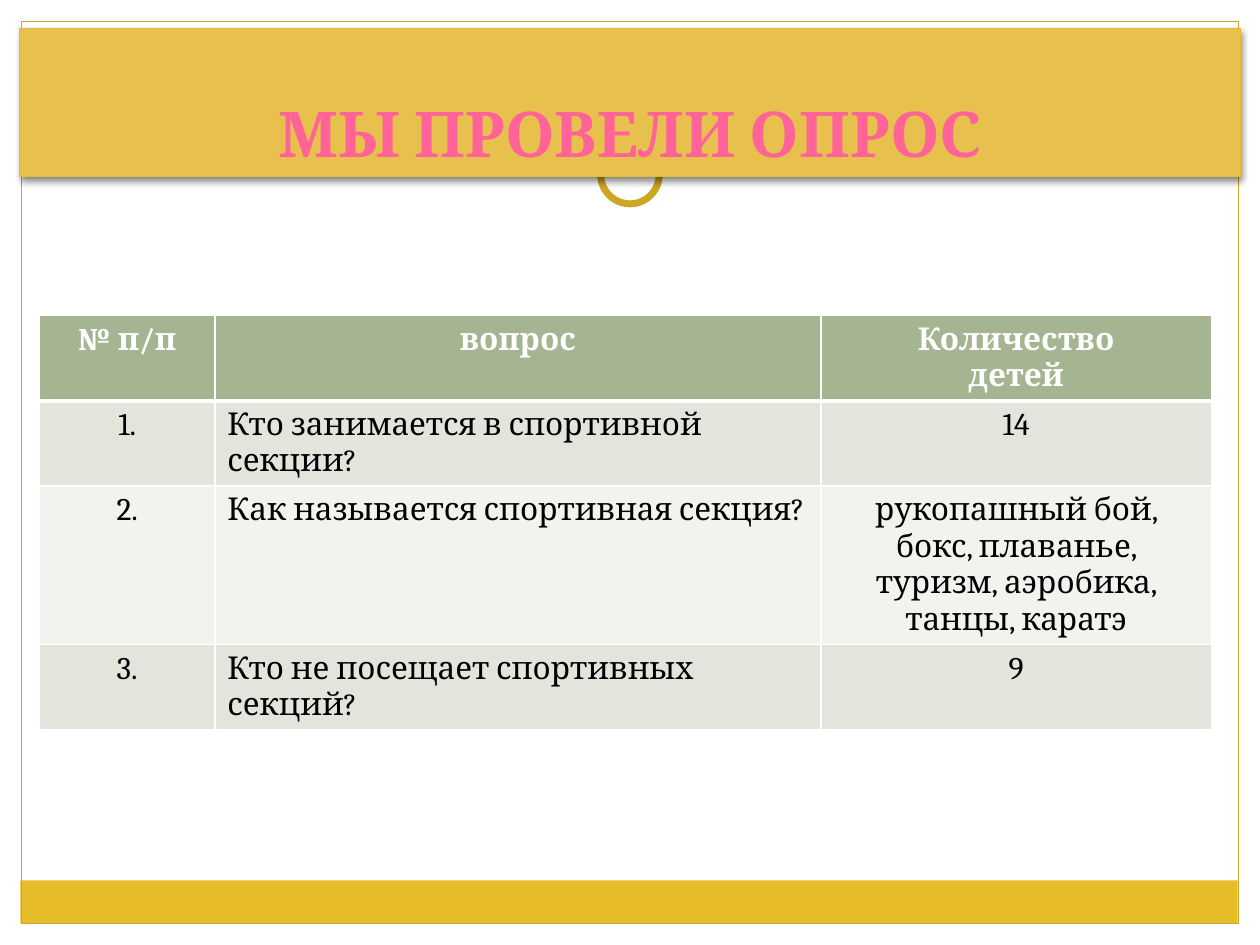
from lxml.etree import SubElement
from pptx import Presentation
from pptx.dml.color import RGBColor
from pptx.enum.dml import MSO_LINE
from pptx.enum.shapes import MSO_CONNECTOR, MSO_SHAPE
from pptx.enum.text import MSO_ANCHOR, PP_ALIGN
from pptx.oxml import parse_xml
from pptx.oxml.ns import nsdecls, qn
from pptx.util import Cm, Pt

WHITE = RGBColor(0xFF, 0xFF, 0xFF)
BLACK = RGBColor(0x00, 0x00, 0x00)
GOLD = RGBColor(0xE7, 0xBC, 0x29)
DARK_GOLD = RGBColor(0xCC, 0xA6, 0x24)
TITLE_GOLD = RGBColor(0xE8, 0xC0, 0x4D)
PINK = RGBColor(0xFF, 0x63, 0x98)
HEADER_GREEN = RGBColor(0xA5, 0xB5, 0x92)
BANDS = [RGBColor(0xE1, 0xE5, 0xDC), RGBColor(0xF0, 0xF3, 0xEE)]
FONT = "Cambria"

prs = Presentation()
prs.slide_width, prs.slide_height = Cm(25.4), Cm(19.05)
s = prs.slides.add_slide(prs.slide_layouts[6])


def add_box(kind, x, y, w, h, fill=None, line=None, width=0.75):
    sp = s.shapes.add_shape(kind, Cm(x), Cm(y), Cm(w), Cm(h))
    sp.shadow.inherit = False
    if fill is None:
        sp.fill.background()
    else:
        sp.fill.solid()
        sp.fill.fore_color.rgb = fill
    if line is None:
        sp.line.fill.background()
    else:
        sp.line.color.rgb = line
        sp.line.width = Pt(width)
    return sp


def write(p, text, size, color, bold, align):
    p.alignment = align
    r = p.add_run()
    r.text = text
    r.font.name = FONT
    r.font.size = Pt(size)
    r.font.bold = bold
    r.font.color.rgb = color


# Slide frame, footer band and ring
add_box(MSO_SHAPE.RECTANGLE, 0.41, 17.75, 24.54, 0.86, fill=GOLD)
add_box(MSO_SHAPE.RECTANGLE, 0.43, 0.43, 24.54, 18.19, line=DARK_GOLD)
rule = s.shapes.add_connector(MSO_CONNECTOR.STRAIGHT, Cm(0.43), Cm(3.56), Cm(24.97), Cm(3.56))
rule.line.color.rgb = DARK_GOLD
rule.line.width = Pt(0.75)
rule.line.dash_style = MSO_LINE.SQUARE_DOT
SubElement(rule._element.spPr, qn("a:effectLst"))
add_box(MSO_SHAPE.OVAL, 11.85, 2.67, 1.7, 1.7, fill=WHITE)
add_box(MSO_SHAPE.OVAL, 12.11, 2.93, 1.18, 1.18, fill=WHITE, line=DARK_GOLD, width=4)

# Title banner
title = add_box(MSO_SHAPE.RECTANGLE, 0.4, 0.58, 24.61, 2.98, fill=TITLE_GOLD, line=GOLD)
effects = title._element.spPr.find(qn("a:effectLst"))
effects.append(parse_xml(
    f'<a:outerShdw {nsdecls("a")} blurRad="50800" dist="25400" dir="5400000" rotWithShape="0">'
    '<a:srgbClr val="000000"><a:alpha val="45000"/></a:srgbClr></a:outerShdw>'))
tf = title.text_frame
tf.word_wrap = True
tf.vertical_anchor = MSO_ANCHOR.BOTTOM
write(tf.paragraphs[0], "МЫ ПРОВЕЛИ ОПРОС", 36, PINK, True, PP_ALIGN.CENTER)

# Survey table
rows = [
    ("№ п/п", "вопрос", "Количество\nдетей"),
    ("1.", "Кто занимается в спортивной секции?", "14"),
    ("2.", "Как называется спортивная секция?",
     "рукопашный бой, бокс, плаванье, туризм, аэробика, танцы, каратэ"),
    ("3.", "Кто не посещает спортивных секций?", "9"),
]
table = s.shapes.add_table(len(rows), 3, Cm(0.8), Cm(6.36), Cm(23.62), Cm(6.38)).table
for column, width in zip(table.columns, (3.53, 12.22, 7.87)):
    column.width = Cm(width)

for i, row in enumerate(rows):
    header = i == 0
    for j, text in enumerate(row):
        cell = table.cell(i, j)
        tcPr = cell._tc.get_or_add_tcPr()
        for side in "LRTB":
            thick = (header and side == "B") or (i == 1 and side == "T")
            tcPr.append(parse_xml(
                f'<a:ln{side} {nsdecls("a")} w="{Pt(3 if thick else 1)}">'
                f'<a:solidFill><a:srgbClr val="{WHITE}"/></a:solidFill></a:ln{side}>'))
        cell.fill.solid()
        cell.fill.fore_color.rgb = HEADER_GREEN if header else BANDS[(i - 1) % 2]
        align = PP_ALIGN.LEFT if j == 1 and not header else PP_ALIGN.CENTER
        tf = cell.text_frame
        for k, line in enumerate(text.split("\n")):
            p = tf.add_paragraph() if k else tf.paragraphs[0]
            write(p, line, 18, WHITE if header else BLACK, header, align)

prs.save("out.pptx")
